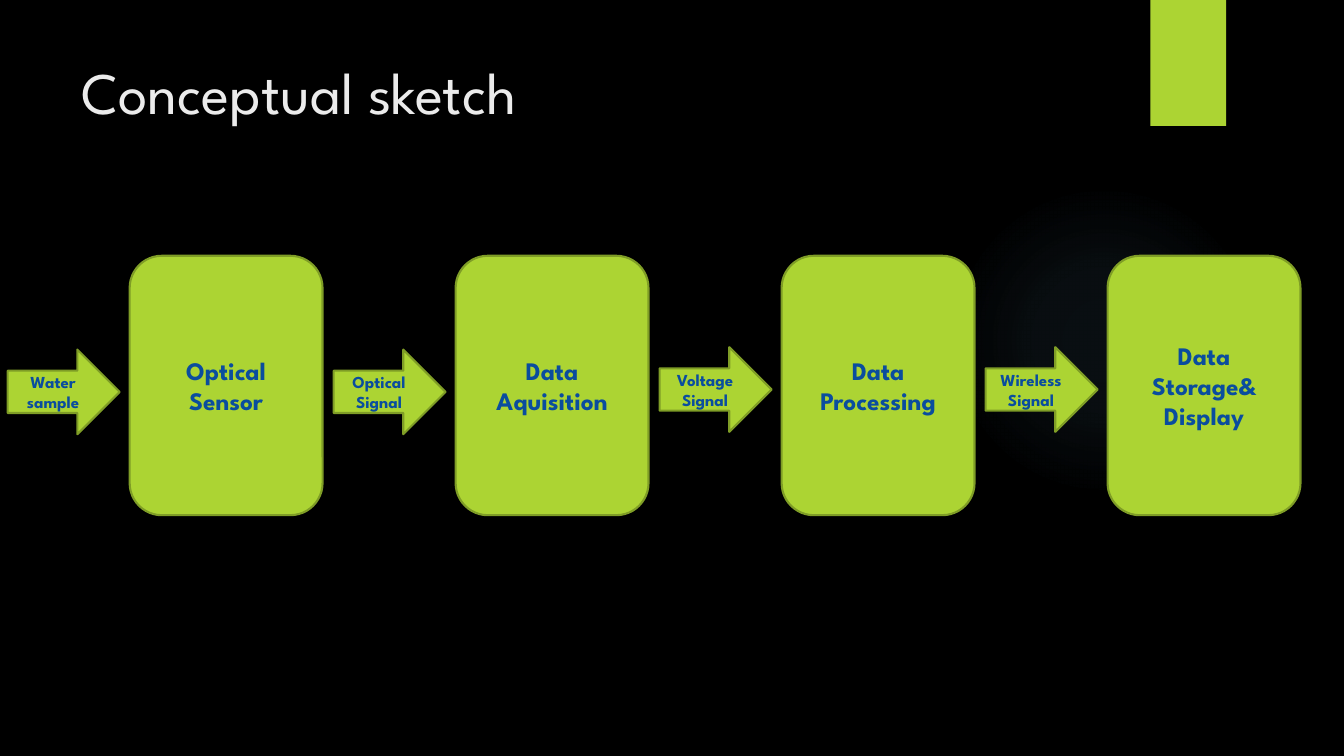
import pptx
import pptx.util
import pptx.dml.color
import pptx.enum.shapes
import pptx.enum.text
import pptx.oxml
import pptx.oxml.ns

Pt = pptx.util.Pt
SHAPE = pptx.enum.shapes.MSO_SHAPE
ANCHOR = pptx.enum.text.MSO_ANCHOR
ALIGN = pptx.enum.text.PP_ALIGN

HEADING = "Conceptual sketch"
STAGES = [
    ("Water sample", 249.7, "Optical Sensor"),
    ("Optical Signal", 249.7, "Data Aquisition"),
    ("Voltage Signal", 248, "Data Processing"),
    ("Wireless Signal", 248, "Data Storage& Display"),
]
GREEN, EDGE, BLUE, PALE = "ACD433", "7F9D26", "0A4D9E", "EBEBEB"
GLOW = "7AC4F0"
GLOW_STOPS = [(0, 7), (36, 6), (69, 0)]
FACE = "League Spartan"
PITCH = 232.85
BLOCK_LEFT, BLOCK_TOP, BLOCK_SIZE = 92.6, 182.7, (137.8, 185.3)
ARROW_LEFT, ARROW_SIZE = 5.5, (80, 60.5)
LABEL = {"name": FACE, "bold": True}


def color(value):
    return pptx.dml.color.RGBColor.from_string(value)


def apply(target, values):
    for key, value in values.items():
        setattr(target, key, value)


def add_part(slide, preset, left, top, size):
    part = slide.shapes.add_shape(preset, Pt(left), Pt(top), *map(Pt, size))
    part.shadow.inherit = False
    part.fill.solid()
    part.fill.fore_color.rgb = color(GREEN)
    part.line.fill.background()
    return part


def add_labelled(slide, preset, left, top, size, label, points):
    part = add_part(slide, preset, left, top, size)
    part.line.color.rgb = color(EDGE)
    part.line.width = Pt(1.5)
    frame = part.text_frame
    apply(frame, {"word_wrap": True, "vertical_anchor": ANCHOR.MIDDLE})
    paragraph = frame.paragraphs[0]
    apply(paragraph, {"text": label, "alignment": ALIGN.CENTER})
    font = paragraph.runs[0].font
    apply(font, {**LABEL, "size": Pt(points)})
    font.color.rgb = color(BLUE)


def add_glow(slide):
    glow = add_part(slide, SHAPE.OVAL, 677.5, 131.8, (221.8, 221.8))
    stops = "".join(
        f'<a:gs pos="{place * 1000}"><a:srgbClr val="{GLOW}">'
        f'<a:alpha val="{alpha * 1000}"/></a:srgbClr></a:gs>'
        for place, alpha in GLOW_STOPS
    )
    gradient = pptx.oxml.parse_xml(
        f'<a:gradFill {pptx.oxml.ns.nsdecls("a")} rotWithShape="1">'
        f'<a:gsLst>{stops}</a:gsLst><a:path path="circle">'
        '<a:fillToRect l="50000" t="50000" r="50000" b="50000"/>'
        "</a:path></a:gradFill>"
    )
    properties = glow._element.spPr
    properties.replace(properties.find(pptx.oxml.ns.qn("a:solidFill")), gradient)


def add_heading(slide):
    title = slide.shapes.title
    apply(title, {"left": Pt(51), "top": Pt(36), "width": Pt(741), "height": Pt(110)})
    frame = title.text_frame
    frame.text = HEADING
    apply(frame, {"word_wrap": True, "vertical_anchor": ANCHOR.TOP})
    paragraph = frame.paragraphs[0]
    paragraph.alignment = ALIGN.LEFT
    font = paragraph.runs[0].font
    apply(font, {"name": FACE, "size": Pt(42), "bold": False})
    font.color.rgb = color(PALE)


def main():
    deck = pptx.Presentation()
    apply(deck, {"slide_width": Pt(960), "slide_height": Pt(540)})
    slide = deck.slides.add_slide(deck.slide_layouts[5])
    slide.background.fill.solid()
    slide.background.fill.fore_color.rgb = color("000000")
    add_glow(slide)
    add_part(slide, SHAPE.RECTANGLE, 821.8, 0, (54, 90))
    add_heading(slide)
    for index, (flow, flow_top, stage) in enumerate(STAGES):
        shift = index * PITCH
        add_labelled(slide, SHAPE.ROUNDED_RECTANGLE, BLOCK_LEFT + shift,
                     BLOCK_TOP, BLOCK_SIZE, stage, 18)
        add_labelled(slide, SHAPE.RIGHT_ARROW, ARROW_LEFT + shift,
                     flow_top, ARROW_SIZE, flow, 12)
    deck.save("out.pptx")


if __name__ == "__main__":
    main()
